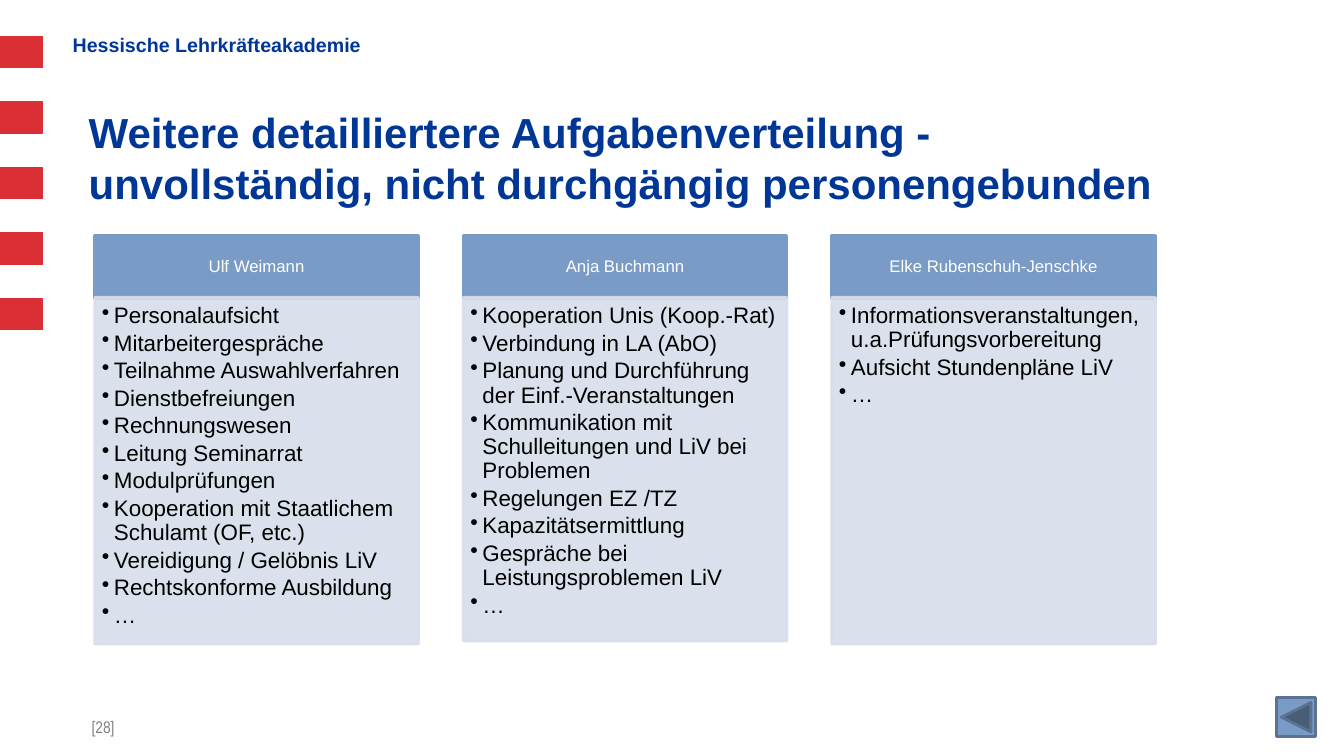
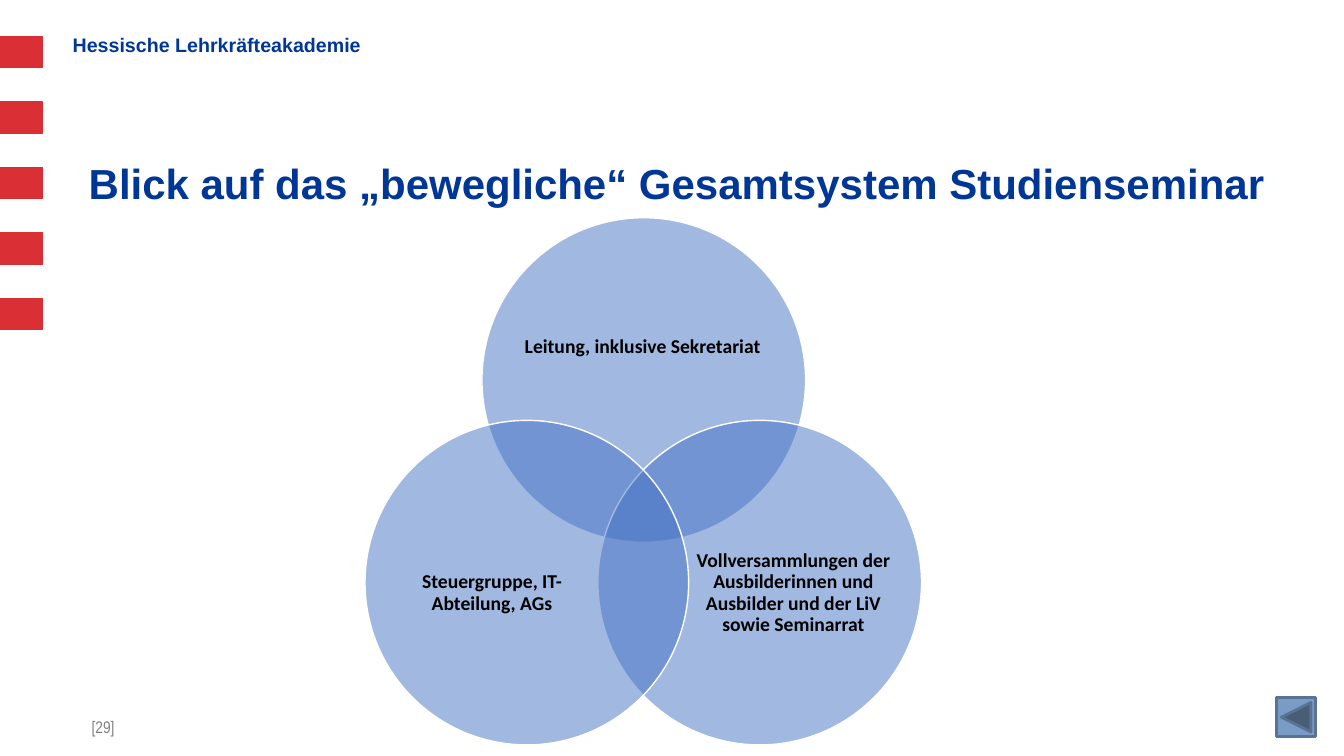
import dataclasses
import typing

import lxml.etree
import pptx
import pptx.dml.color
import pptx.enum.shapes
import pptx.enum.text
import pptx.oxml.ns
import pptx.util

Inches = pptx.util.Inches
Pt = pptx.util.Pt
Shape = pptx.enum.shapes.MSO_SHAPE
Align = pptx.enum.text.PP_ALIGN
Anchor = pptx.enum.text.MSO_ANCHOR
Rect = tuple[float, float, float, float]


@dataclasses.dataclass(frozen=True)
class Style:
    size: float
    color: str
    name: str = "Arial"
    bold: bool = False


@dataclasses.dataclass(frozen=True)
class Theme:
    red: str = "DB2F36"
    steel: str = "799BC5"
    steel_dark: str = "5A7392"
    panel: str = "D7DEEA"
    circle: str = "4472C4"
    white: str = "FFFFFF"
    brand: Style = Style(14, "003695", bold=True)
    title: Style = Style(30, "003695", bold=True)
    number: Style = Style(12, "808080", "Arial Narrow")
    head: Style = Style(12, "FFFFFF")
    body: Style = Style(16, "000000")
    label: Style = Style(14, "000000", "Calibri", True)


@dataclasses.dataclass(frozen=True)
class Column:
    name: str
    tasks: tuple[str, ...]
    height: float = 3.44


@dataclasses.dataclass(frozen=True)
class Circle:
    text: str
    left: float
    top: float
    label: Rect


THEME = Theme()

COLUMNS = (
    Column("Ulf Weimann", (
        "Personalaufsicht",
        "Mitarbeitergespräche",
        "Teilnahme Auswahlverfahren",
        "Dienstbefreiungen",
        "Rechnungswesen",
        "Leitung Seminarrat",
        "Modulprüfungen",
        "Kooperation mit Staatlichem Schulamt (OF, etc.)",
        "Vereidigung / Gelöbnis LiV",
        "Rechtskonforme Ausbildung",
        "…",
    )),
    Column("Anja Buchmann", (
        "Kooperation Unis (Koop.-Rat)",
        "Verbindung in LA (AbO)",
        "Planung und Durchführung der Einf.-Veranstaltungen",
        "Kommunikation mit Schulleitungen und LiV bei Problemen",
        "Regelungen EZ /TZ",
        "Kapazitätsermittlung",
        "Gespräche bei Leistungsproblemen LiV",
        "…",
    ), 3.41),
    Column("Elke Rubenschuh-Jenschke", (
        "Informationsveranstaltungen, u.a.Prüfungsvorbereitung",
        "Aufsicht Stundenpläne LiV",
        "…",
    )),
)

CIRCLES = (
    Circle("Leitung, inklusive Sekretariat", 4.78, 2.16, (5.2, 2.72, 2.35, 1.45)),
    Circle("Vollversammlungen der Ausbilderinnen und Ausbilder und der LiV sowie Seminarrat",
           5.93, 4.17, (6.91, 5, 1.92, 1.77)),
    Circle("Steuergruppe, IT- Abteilung, AGs", 3.62, 4.17, (3.92, 5, 1.92, 1.77)),
)


def apply(target: typing.Any, values: dict[str, typing.Any]) -> None:
    for name, value in values.items():
        setattr(target, name, value)


def rgb(color: str) -> pptx.dml.color.RGBColor:
    return pptx.dml.color.RGBColor.from_string(color)


def add_shape(page, kind, rect: Rect, fill: str, line: str, width: float, opacity: int = 100):
    shape = page.shapes.add_shape(kind, *map(Inches, rect))
    shape.shadow.inherit = False
    shape.fill.solid()
    shape.fill.fore_color.rgb = rgb(fill)
    shape.line.color.rgb = rgb(line)
    shape.line.width = Pt(width)
    if opacity < 100:
        properties = shape.fill._xPr
        colors = [properties.find(pptx.oxml.ns.qn("a:solidFill"))]
        if line == fill:
            colors.append(shape.line._ln.find(pptx.oxml.ns.qn("a:solidFill")))
        for color in colors:
            lxml.etree.SubElement(color[0], pptx.oxml.ns.qn("a:alpha"), val=str(opacity * 1000))
    return shape


def add_bullet(para, indent: float) -> None:
    properties = para._p.get_or_add_pPr()
    apply_indent = {"marL": Inches(indent), "indent": -Inches(indent)}
    for name, value in apply_indent.items():
        properties.set(name, str(int(value)))
    lxml.etree.SubElement(properties, pptx.oxml.ns.qn("a:buChar"), char="•")


def write(box, texts: typing.Sequence[str], style: Style, insets: Rect,
          anchor=Anchor.TOP, align=Align.LEFT, spacing: float = 0.9,
          after: float = 0, bullet: bool = False) -> None:
    frame = box.text_frame
    left, top, right, bottom = map(Inches, insets)
    apply(frame, {
        "word_wrap": True,
        "auto_size": pptx.enum.text.MSO_AUTO_SIZE.NONE,
        "vertical_anchor": anchor,
        "margin_left": left,
        "margin_top": top,
        "margin_right": right,
        "margin_bottom": bottom,
    })
    for index, text in enumerate(texts):
        para = frame.paragraphs[0] if index == 0 else frame.add_paragraph()
        apply(para, {"alignment": align, "line_spacing": spacing, "space_after": Pt(after)})
        if bullet:
            add_bullet(para, 0.12)
        for position, part in enumerate(text.splitlines()):
            if position:
                para.add_line_break()
            span = para.add_run()
            span.text = part
            apply(span.font, {"size": Pt(style.size), "name": style.name, "bold": style.bold})
            span.font.color.rgb = rgb(style.color)


def add_text(page, rect: Rect, text: str, style: Style, insets: Rect, **layout) -> None:
    write(page.shapes.add_textbox(*map(Inches, rect)), [text], style, insets, **layout)


def add_page(deck, title: str, number: int):
    page = deck.slides.add_slide(deck.slide_layouts[5])
    for index in range(5):
        add_shape(page, Shape.RECTANGLE, (0, 0.36 + 0.65 * index, 0.42, 0.31),
                  THEME.red, THEME.red, 0.75)
    add_text(page, (0.72, 0.3, 10.71, 0.31), "Hessische Lehrkräfteakademie",
             THEME.brand, (0, 0.05, 0, 0.05))
    box = page.shapes.title
    apply(box, {"left": Inches(0.78), "top": Inches(0.98),
                "width": Inches(12.3), "height": Inches(1.08)})
    write(box, [title], THEME.title, (0.1, 0, 0.1, 0), anchor=Anchor.BOTTOM, spacing=1.0)
    add_text(page, (0.81, 7.06, 1.03, 0.33), f"[{number}]", THEME.number,
             (0.1, 0.05, 0.1, 0.05), spacing=1.0)
    add_shape(page, Shape.ACTION_BUTTON_BACK_OR_PREVIOUS, (12.66, 6.92, 0.39, 0.39),
              THEME.steel, THEME.steel_dark, 2)
    return page


def add_column(page, column: Column, left: float) -> None:
    width = 3.21
    head = add_shape(page, Shape.RECTANGLE, (left, 2.34, width, 0.62),
                     THEME.steel, THEME.steel, 2)
    write(head, [column.name], THEME.head, (0.09, 0.05, 0.09, 0.05),
          anchor=Anchor.MIDDLE, align=Align.CENTER)
    body = add_shape(page, Shape.RECTANGLE, (left, 2.95, width, column.height),
                     THEME.panel, THEME.panel, 2, 90)
    write(body, column.tasks, THEME.body, (0.07, 0.07, 0.09, 0.1), after=2.4, bullet=True)


def add_circle(page, circle: Circle) -> None:
    add_shape(page, Shape.OVAL, (circle.left, circle.top, 3.21, 3.22),
              THEME.circle, THEME.white, 1, 50)
    add_text(page, circle.label, circle.text, THEME.label, (0, 0, 0, 0),
             anchor=Anchor.MIDDLE, align=Align.CENTER)


def main() -> None:
    deck = pptx.Presentation()
    apply(deck, {"slide_width": Inches(13.33), "slide_height": Inches(7.5)})
    page = add_page(deck, """Weitere detailliertere Aufgabenverteilung -
unvollständig, nicht durchgängig personengebunden""", 28)
    for index, column in enumerate(COLUMNS):
        add_column(page, column, 0.94 + 3.655 * index)
    page = add_page(deck, "Blick auf das „bewegliche“ Gesamtsystem Studienseminar", 29)
    for circle in CIRCLES:
        add_circle(page, circle)
    deck.save("out.pptx")


if __name__ == "__main__":
    main()
